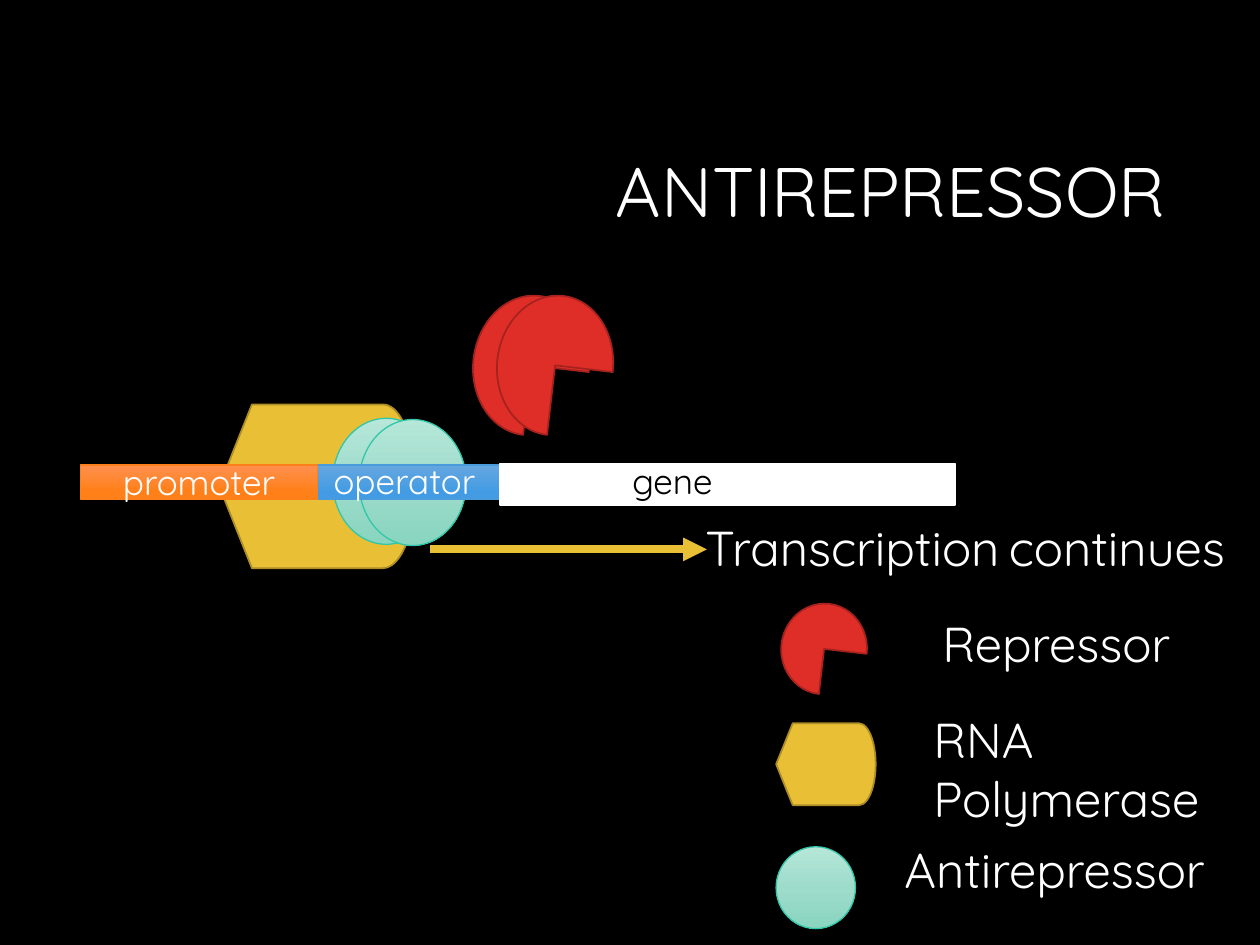
from copy import deepcopy
from dataclasses import dataclass
from typing import Optional

from pptx import Presentation
from pptx.dml.color import RGBColor
from pptx.enum.shapes import MSO_CONNECTOR, MSO_SHAPE
from pptx.enum.text import MSO_ANCHOR, MSO_AUTO_SIZE, PP_ALIGN
from pptx.oxml.ns import qn
from pptx.oxml.xmlchemy import OxmlElement
from pptx.util import Inches, Pt

COLUMNS, ROWS = 100, 75


@dataclass(frozen=True)
class Paint:
    stops: tuple
    outline: str
    outline_width: float


@dataclass(frozen=True)
class Theme:
    font: str = "Quicksand"
    background: str = "000000"
    light: str = "FFFFFF"
    dark: str = "000000"
    title_size: int = 40
    legend_size: int = 28
    dna_size: int = 20
    arrow_width: float = 4.5
    repressor: Paint = Paint(((0, "DF2E28"),), "A5221E", 1)
    polymerase: Paint = Paint(((0, "E9BF35"),), "AC8D27", 1)
    antirepressor: Paint = Paint(
        ((0, "B6E7D9"), (0.52, "9DDBCA"), (1, "89D5C0")), "32C7A9", 0.75)
    promoter: Paint = Paint(((0, "FE904F"), (0.78, "FF8019")), "FE801A", 0.75)
    operator: Paint = Paint(((0, "66A7E0"), (0.78, "439CE3")), "4A9BDC", 0.75)
    gene: Paint = Paint(((0, "FFFFFF"),), "FFFFFF", 1)


@dataclass(frozen=True)
class Cell:
    column: float
    row: float
    columns: float
    rows: float


@dataclass(frozen=True)
class Part:
    cell: Cell
    geometry: MSO_SHAPE
    paint: Paint
    rotation: float = 0
    label: str = ""


@dataclass(frozen=True)
class Caption:
    cell: Cell
    words: tuple
    sizes: tuple
    color: str
    wrap: bool = True
    align: Optional[PP_ALIGN] = None
    anchor: MSO_ANCHOR = MSO_ANCHOR.TOP
    spacing: Optional[float] = None
    grow: bool = True


THEME = Theme()
PIE_TURN = 96.6

deck = Presentation()
deck.slide_width, deck.slide_height = Inches(10), Inches(7.5)
slide = deck.slides.add_slide(deck.slide_layouts[6])


def across(columns: float) -> int:
    return round(deck.slide_width * columns / COLUMNS)


def down(rows: float) -> int:
    return round(deck.slide_height * rows / ROWS)


def frame(cell: Cell) -> tuple:
    return (across(cell.column), down(cell.row),
            across(cell.columns), down(cell.rows))


def style_run(run, size: float, color: str) -> None:
    run.font.name = THEME.font
    run.font.size = Pt(size)
    run.font.color.rgb = RGBColor.from_string(color)


def apply_paint(shape, paint: Paint) -> None:
    if len(paint.stops) == 1:
        shape.fill.solid()
        shape.fill.fore_color.rgb = RGBColor.from_string(paint.stops[0][1])
    else:
        shape.fill.gradient()
        shape.fill.gradient_angle = 270
        stop_list = shape._element.spPr.find(".//" + qn("a:gsLst"))
        for _ in paint.stops[2:]:
            stop_list.append(deepcopy(stop_list[-1]))
        for stop, (position, color) in zip(shape.fill.gradient_stops, paint.stops):
            stop.position = position
            stop.color.rgb = RGBColor.from_string(color)
    shape.line.color.rgb = RGBColor.from_string(paint.outline)
    shape.line.width = Pt(paint.outline_width)


def draw_part(part: Part) -> None:
    shape = slide.shapes.add_shape(part.geometry, *frame(part.cell))
    shape.shadow.inherit = False
    shape.rotation = part.rotation
    apply_paint(shape, part.paint)
    if part.label:
        shape.text_frame.text = part.label
        shape.text_frame.vertical_anchor = MSO_ANCHOR.MIDDLE
        paragraph = shape.text_frame.paragraphs[0]
        paragraph.alignment = PP_ALIGN.CENTER
        style_run(paragraph.runs[0], THEME.dna_size, THEME.light)


def draw_caption(caption: Caption) -> None:
    text = slide.shapes.add_textbox(*frame(caption.cell)).text_frame
    text.word_wrap = caption.wrap
    text.auto_size = (MSO_AUTO_SIZE.SHAPE_TO_FIT_TEXT if caption.grow
                      else MSO_AUTO_SIZE.NONE)
    text.vertical_anchor = caption.anchor
    paragraph = text.paragraphs[0]
    paragraph.alignment = caption.align
    paragraph.line_spacing = caption.spacing
    for word, size in zip(caption.words, caption.sizes):
        run = paragraph.add_run()
        run.text = word
        style_run(run, size, caption.color)


def draw_arrow(start: float, end: float, row: float) -> None:
    arrow = slide.shapes.add_connector(
        MSO_CONNECTOR.STRAIGHT, across(start), down(row), across(end), down(row))
    arrow.line.color.rgb = RGBColor.from_string(THEME.polymerase.stops[0][1])
    arrow.line.width = Pt(THEME.arrow_width)
    head = OxmlElement("a:tailEnd")
    head.set("type", "triangle")
    arrow.line._get_or_add_ln().append(head)
    arrow._element.spPr.append(OxmlElement("a:effectLst"))


def repressor(cell: Cell) -> Part:
    return Part(cell, MSO_SHAPE.PIE, THEME.repressor, PIE_TURN)


def polymerase(cell: Cell) -> Part:
    return Part(cell, MSO_SHAPE.FLOWCHART_DISPLAY, THEME.polymerase)


def antirepressor(cell: Cell) -> Part:
    return Part(cell, MSO_SHAPE.OVAL, THEME.antirepressor)


def segment(cell: Cell, paint: Paint, label: str = "") -> Part:
    return Part(cell, MSO_SHAPE.RECTANGLE, paint, label=label)


def legend(cell: Cell, *words: str, wrap: bool = True) -> Caption:
    sizes = tuple(THEME.legend_size if word.strip() else THEME.dna_size
                  for word in words)
    return Caption(cell, words, sizes, THEME.light, wrap)


def dna_label(cell: Cell, word: str, color: str, wrap: bool = True) -> Caption:
    return Caption(cell, (word,), (THEME.dna_size,), color, wrap)


CONTENT = (
    Caption(Cell(1.2, 8.4, 92.3, 14.1), ("ANTIREPRESSOR",), (THEME.title_size,),
            THEME.light, align=PP_ALIGN.RIGHT, anchor=MSO_ANCHOR.MIDDLE,
            spacing=0.9, grow=False),
    repressor(Cell(61.8, 48.1, 7.2, 6.8)),
    legend(Cell(73.8, 48.2, 21.2, 5.7), "Repressor"),
    legend(Cell(73.1, 55.8, 25, 10.4), "RNA Polymerase"),
    antirepressor(Cell(61.6, 67.2, 6.3, 6.5)),
    polymerase(Cell(61.6, 57.4, 7.9, 6.5)),
    legend(Cell(70.8, 66.1, 29.2, 5.7), "Antirepressor"),
    legend(Cell(55, 40.6, 44.9, 5.7), "Transcription", " ", "continues", wrap=False),
    polymerase(Cell(17.4, 32.1, 15.6, 13)),
    antirepressor(Cell(26.4, 33.2, 8.5, 10)),
    antirepressor(Cell(28.5, 33.3, 8.5, 10)),
    segment(Cell(25.1, 36.9, 14.7, 2.7), THEME.operator),
    segment(Cell(39.7, 36.8, 36.1, 3.3), THEME.gene),
    dna_label(Cell(49.2, 36, 26.6, 4.4), "gene", THEME.dark),
    segment(Cell(6.4, 36.9, 18.8, 2.7), THEME.promoter, "promoter"),
    dna_label(Cell(25.5, 36, 14, 4.4), "operator", THEME.light, wrap=False),
    repressor(Cell(36.6, 24.4, 11.1, 9.2)),
    repressor(Cell(38.5, 24.4, 11.1, 9.2)),
)


def main() -> None:
    backdrop = slide.background.fill
    backdrop.solid()
    backdrop.fore_color.rgb = RGBColor.from_string(THEME.background)
    for item in CONTENT:
        if isinstance(item, Part):
            draw_part(item)
        else:
            draw_caption(item)
    draw_arrow(34.1, 56.1, 43.6)
    deck.save("out.pptx")


if __name__ == "__main__":
    main()
